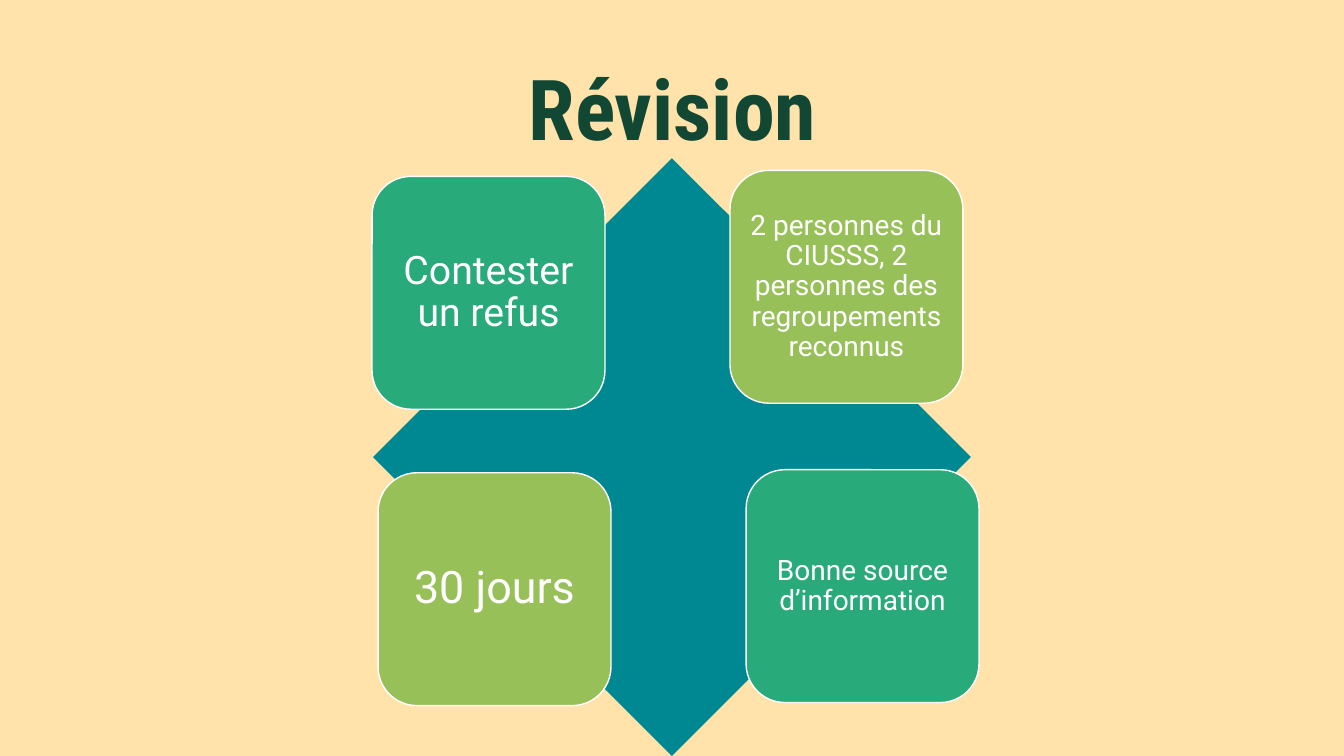
from pptx import Presentation
from pptx.dml.color import RGBColor
from pptx.enum import shapes, text
from pptx.util import Inches, Pt

COLORS = {
    "sand": "FFE3AB",
    "forest": "124733",
    "teal": "008892",
    "green": "28AA7A",
    "lime": "97C059",
    "white": "FFFFFF",
}
HEADING = "Révision"
CARD_SIDE = 2.31
CARDS = [
    ("Contester un refus", 3.69, 1.75, "green", 28, 0.12),
    ("2 personnes du CIUSSS, 2 personnes des regroupements reconnus",
     7.24, 1.69, "lime", 20, 0.08),
    ("30 jours", 3.75, 4.69, "lime", 32, 0.13),
    ("Bonne source d’information", 7.4, 4.66, "green", 20, 0.08),
]


def paint(fill, color):
    fill.solid()
    fill.fore_color.rgb = RGBColor.from_string(COLORS[color])


def write(frame, words, font, size, color, bold=False):
    frame.word_wrap = True
    frame.auto_size = text.MSO_AUTO_SIZE.NONE
    frame.vertical_anchor = text.MSO_ANCHOR.MIDDLE
    paragraph = frame.paragraphs[0]
    paragraph.alignment = text.PP_ALIGN.CENTER
    paragraph.line_spacing = 0.9
    paragraph.space_before = Pt(0)
    run = paragraph.add_run()
    run.text = words
    run.font.name = font
    run.font.size = Pt(size)
    run.font.bold = bold
    run.font.color.rgb = RGBColor.from_string(COLORS[color])


def add_block(slide, preset, left, top, side, color):
    block = slide.shapes.add_shape(
        preset, Inches(left), Inches(top), Inches(side), Inches(side))
    block.shadow.inherit = False
    paint(block.fill, color)
    return block


def main():
    deck = Presentation()
    deck.slide_width, deck.slide_height = Inches(13.33), Inches(7.5)
    slide = deck.slides.add_slide(deck.slide_layouts[5])
    paint(slide.background.fill, "sand")

    heading = slide.shapes.title
    heading.left, heading.top = Inches(0.92), Inches(0.4)
    heading.width, heading.height = Inches(11.5), Inches(1.45)
    write(heading.text_frame, HEADING, "Roboto Condensed", 60, "forest", True)

    diamond = add_block(slide, shapes.MSO_SHAPE.DIAMOND, 3.7, 1.57, 5.93, "teal")
    diamond.line.fill.background()

    for words, left, top, color, size, inset in CARDS:
        card = add_block(slide, shapes.MSO_SHAPE.ROUNDED_RECTANGLE,
                         left, top, CARD_SIDE, color)
        paint(card.line.fill, "white")
        card.line.width = Pt(1)
        frame = card.text_frame
        frame.margin_left = frame.margin_right = Inches(inset)
        frame.margin_top = frame.margin_bottom = Inches(inset)
        write(frame, words, "Roboto", size, "white")

    deck.save("out.pptx")


if __name__ == "__main__":
    main()
